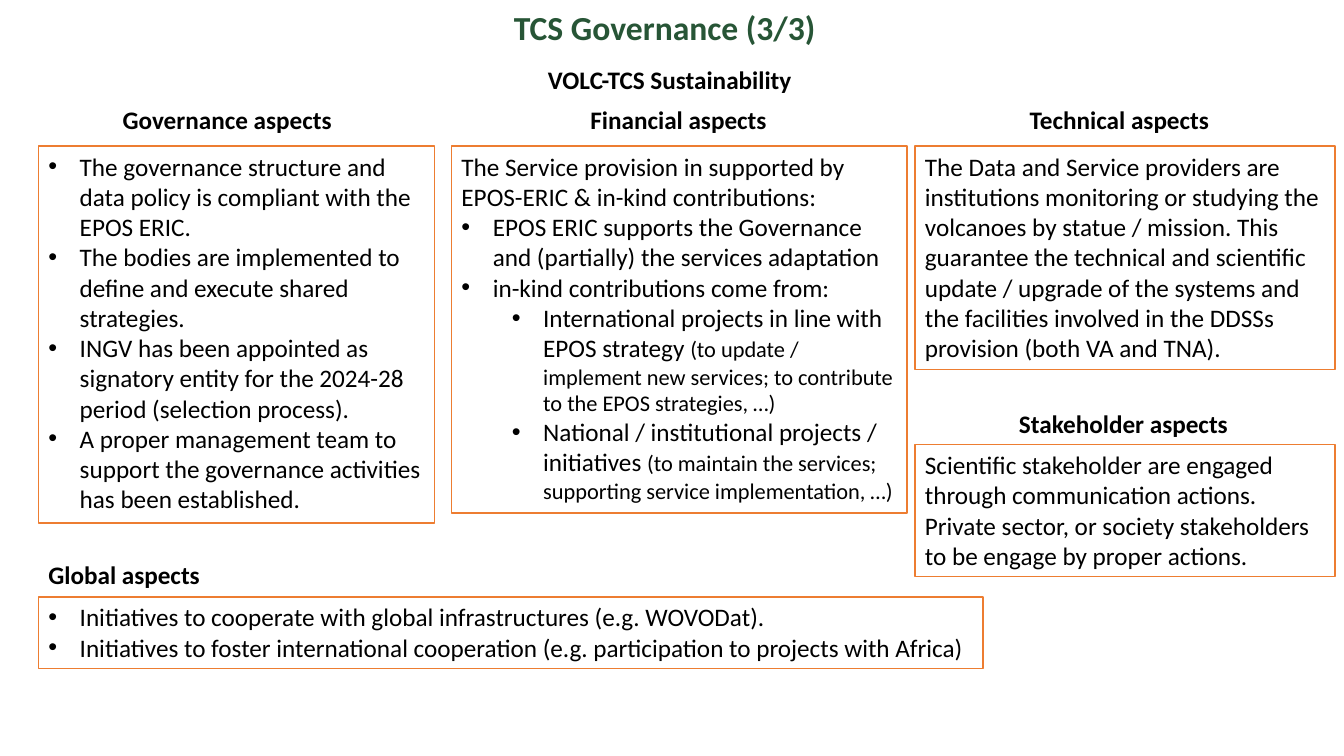
from lxml.etree import SubElement
from pptx import Presentation
from pptx.dml.color import RGBColor
from pptx.enum.shapes import MSO_SHAPE
from pptx.enum.text import MSO_ANCHOR, MSO_AUTO_SIZE, PP_ALIGN
from pptx.oxml.ns import qn
from pptx.util import Cm, Pt

GREEN = RGBColor(0x27, 0x55, 0x36)
ORANGE = RGBColor(0xED, 0x7D, 0x31)
BLACK = RGBColor(0, 0, 0)
WHITE = RGBColor(0xFF, 0xFF, 0xFF)
FONT = "Calibri"

TITLE = "TCS Governance (3/3)"
TITLE_BOX = (0.38, 0.05, 32.74, 1.27)

HEADING_H = 1.02
HEADINGS = [
    ("VOLC-TCS Sustainability", 13.56, 1.5, 7.36),
    ("Governance aspects", 2.84, 2.51, 5.94),
    ("Financial aspects", 14.63, 2.51, 4.97),
    ("Technical aspects", 25.7, 2.5, 5.1),
    ("Stakeholder aspects", 25.43, 10.16, 5.81),
    ("Global aspects", 0.97, 13.97, 4.67),
]

COLUMNS = {"left": (0.97, 9.98), "middle": (11.38, 11.48),
           "right": (23.06, 10.59), "wide": (0.97, 23.8)}
TOP = 3.68
PLAIN, BULLET, SUB = 0, 1, 2
INDENTS = {BULLET: 0.79, SUB: 2.06}
HANGING = 0.79

PANELS = [
    ("middle", TOP, 9.25, [
        (PLAIN, "The Service provision in supported by EPOS-ERIC & in-kind contributions:", ""),
        (BULLET, "EPOS ERIC supports the Governance and (partially) the services adaptation", ""),
        (BULLET, "in-kind contributions come from:", ""),
        (SUB, "International projects in line with EPOS strategy ",
         "(to update / implement new services; to contribute to the EPOS strategies, …)"),
        (SUB, "National / institutional projects / initiatives ",
         "(to maintain the services; supporting service implementation, …)"),
    ]),
    ("left", TOP, 9.5, [
        (BULLET, "The governance structure and data policy is compliant with the EPOS ERIC.", ""),
        (BULLET, "The bodies are implemented to define and execute shared strategies.", ""),
        (BULLET, "INGV has been appointed as signatory entity for the 2024-28 period "
                 "(selection process).", ""),
        (BULLET, "A proper management team to support the governance activities "
                 "has been established.", ""),
    ]),
    ("right", TOP, 5.64, [
        (PLAIN, "The Data and Service providers are institutions monitoring or studying the "
                "volcanoes by statue / mission. This guarantee the technical and scientific "
                "update / upgrade of the systems and the facilities involved in the DDSSs "
                "provision (both VA and TNA).", ""),
    ]),
    ("right", 11.2, 3.33, [
        (PLAIN, "Scientific stakeholder are engaged through communication actions.", ""),
        (PLAIN, "Private sector, or society stakeholders to be engage by proper actions.", ""),
    ]),
    ("wide", 15.04, 1.8, [
        (BULLET, "Initiatives to cooperate with global infrastructures (e.g. WOVODat).", ""),
        (BULLET, "Initiatives to foster international cooperation "
                 "(e.g. participation to projects with Africa)", ""),
    ]),
]


def format_run(r, size, color=BLACK, bold=False):
    """Set the font of one run."""
    r.font.name, r.font.size, r.font.bold = FONT, Pt(size), bold
    r.font.color.rgb = color


def set_frame(tf):
    """Make a text frame wrap, start at the top and keep its size."""
    tf.word_wrap = True
    tf.auto_size = MSO_AUTO_SIZE.NONE
    tf.vertical_anchor = MSO_ANCHOR.TOP


def add_bullet(p, level):
    """Give a paragraph a hanging bullet."""
    p.level = level - 1
    pPr = p._p.get_or_add_pPr()
    pPr.set("marL", str(Cm(INDENTS[level])))
    pPr.set("indent", str(-Cm(HANGING)))
    SubElement(pPr, qn("a:buFont")).set("typeface", "Arial")
    SubElement(pPr, qn("a:buChar")).set("char", "•")


def add_title(s):
    """Place and format the slide title."""
    sp = s.shapes.title
    sp.left, sp.top, sp.width, sp.height = map(Cm, TITLE_BOX)
    tf = sp.text_frame
    tf.text = TITLE
    set_frame(tf)
    p = tf.paragraphs[0]
    p.alignment = PP_ALIGN.CENTER
    format_run(p.runs[0], 24, GREEN, True)


def add_heading(s, text, left, top, width):
    """Add a bold heading."""
    tf = s.shapes.add_textbox(Cm(left), Cm(top), Cm(width), Cm(HEADING_H)).text_frame
    tf.text = text
    set_frame(tf)
    format_run(tf.paragraphs[0].runs[0], 18, bold=True)


def add_panel(s, column, top, height, lines):
    """Add an outlined panel with its paragraphs."""
    left, width = COLUMNS[column]
    sp = s.shapes.add_shape(MSO_SHAPE.RECTANGLE, Cm(left), Cm(top), Cm(width), Cm(height))
    sp.shadow.inherit = False
    sp.fill.solid()
    sp.fill.fore_color.rgb = WHITE
    sp.line.color.rgb = ORANGE
    sp.line.width = Pt(1)
    tf = sp.text_frame
    set_frame(tf)
    for i, (level, text, detail) in enumerate(lines):
        p = tf.add_paragraph() if i else tf.paragraphs[0]
        p.text = text
        p.alignment = PP_ALIGN.LEFT
        if level:
            add_bullet(p, level)
        format_run(p.runs[0], 18)
        if detail:
            r = p.add_run()
            r.text = detail
            format_run(r, 16)


def main():
    """Build the slide and save it."""
    prs = Presentation()
    prs.slide_width, prs.slide_height = Cm(33.87), Cm(19.05)
    s = prs.slides.add_slide(prs.slide_layouts[5])
    add_title(s)
    for heading in HEADINGS:
        add_heading(s, *heading)
    for panel in PANELS:
        add_panel(s, *panel)
    prs.save("out.pptx")


if __name__ == "__main__":
    main()
